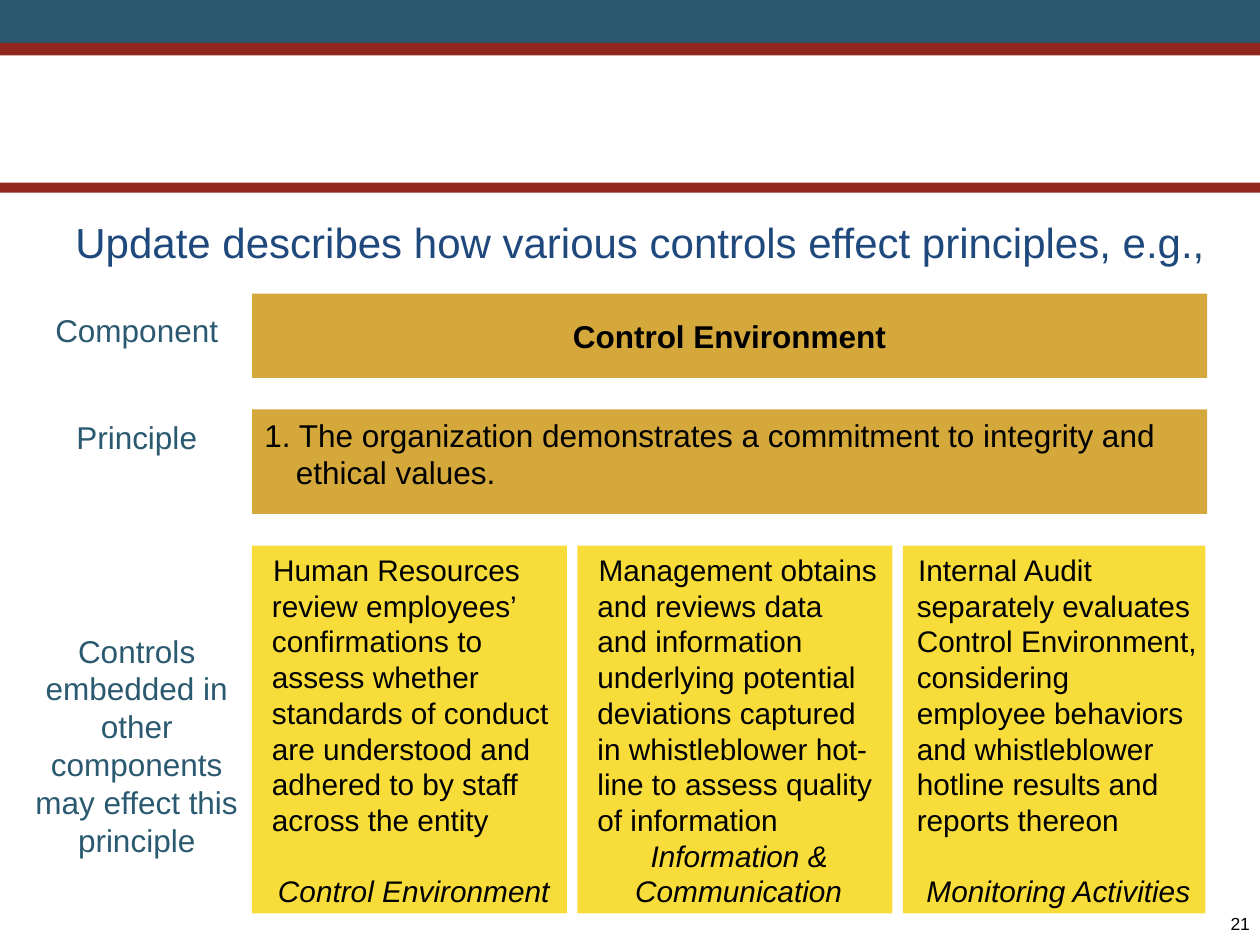
from pptx import Presentation
from pptx.dml.color import RGBColor
from pptx.enum.shapes import MSO_SHAPE
from pptx.enum.text import MSO_ANCHOR, PP_ALIGN
from pptx.util import Inches, Pt

RECTANGLE = MSO_SHAPE.RECTANGLE
TOP, MIDDLE = MSO_ANCHOR.TOP, MSO_ANCHOR.MIDDLE
LEFT, CENTER, RIGHT = PP_ALIGN.LEFT, PP_ALIGN.CENTER, PP_ALIGN.RIGHT

TEAL = RGBColor(0x2A, 0x59, 0x70)
RED = RGBColor(0x91, 0x27, 0x1F)
GOLD = RGBColor(0xD5, 0xA8, 0x3B)
YELLOW = RGBColor(0xF8, 0xDD, 0x3A)
NAVY = RGBColor(0x1F, 0x49, 0x7D)
BLACK = RGBColor(0, 0, 0)

TITLE = "Update describes how various controls effect principles, e.g.,"
COMPONENT = "Control Environment"
PRINCIPLE = ("1. The organization demonstrates a commitment to integrity "
             "and ethical values.")
PAGE_NUMBER = "21"
BANDS = [(0, 0.34, TEAL), (0.34, 0.1, RED), (1.45, 0.08, RED)]
LABELS = [
    ("Component", 0),
    ("Principle", 39.5),
    ("Controls embedded in other components may effect this principle", 100.5),
]
CONTROLS = [
    ("Human Resources review employees’ confirmations to assess whether "
     "standards of conduct are understood and adhered to by staff across "
     "the entity", "Control Environment", 20.4, 2.5, 0.1),
    ("Management obtains and reviews data and information underlying "
     "potential deviations captured in whistleblower hot-line to assess "
     "quality of information", "Information & Communication", 0, 2.5, 0.1),
    ("Internal Audit separately evaluates Control Environment, considering "
     "employee behaviors and whistleblower hotline results and reports "
     "thereon", "Monitoring Activities", 20.4, 2.4, 0.05),
]
BODY_LEFT, BODY_WIDTH = 2, 7.58
CONTROL_TOP, CONTROL_HEIGHT, CONTROL_GAP = 4.33, 2.92, 1 / 12


def add_box(slide, left, top, width, height, fill):
    shape = slide.shapes.add_shape(
        RECTANGLE, Inches(left), Inches(top), Inches(width), Inches(height))
    shape.shadow.inherit = False
    shape.fill.solid()
    shape.fill.fore_color.rgb = fill
    shape.line.fill.background()
    return shape


def add_text_box(slide, left, top, width, height):
    return slide.shapes.add_textbox(
        Inches(left), Inches(top), Inches(width), Inches(height))


def set_frame(shape, anchor=TOP, side=0.1, edge=0.05):
    frame = shape.text_frame
    frame.word_wrap = True
    frame.vertical_anchor = anchor
    frame.margin_left = frame.margin_right = Inches(side)
    frame.margin_top = frame.margin_bottom = Inches(edge)
    return frame


def write(paragraph, text, size, color=BLACK, align=LEFT, before=0,
          margin=0, indent=0, bold=False, italic=False):
    paragraph.text = text
    paragraph.alignment = align
    paragraph.space_before = Pt(before)
    properties = paragraph._p.get_or_add_pPr()
    properties.set("marL", str(Inches(margin)))
    properties.set("indent", str(Inches(indent)))
    font = paragraph.font
    font.name = "Arial"
    font.size = Pt(size)
    font.color.rgb = color
    font.bold = bold
    font.italic = italic


def main():
    presentation = Presentation()
    presentation.slide_width = Inches(10)
    presentation.slide_height = Inches(7.5)
    slide = presentation.slides.add_slide(presentation.slide_layouts[6])

    for top, height, color in BANDS:
        add_box(slide, 0, top, 10, height, color)

    page = set_frame(add_text_box(slide, 8.25, 7.25, 1.67, 0.17), side=0, edge=0)
    write(page.paragraphs[0], PAGE_NUMBER, 10, align=RIGHT)

    title = set_frame(add_text_box(slide, 0.5, 1.33, 9.25, 1.17), MIDDLE)
    write(title.paragraphs[0], TITLE, 24, NAVY)

    component = set_frame(
        add_box(slide, BODY_LEFT, 2.33, BODY_WIDTH, 0.67, GOLD), MIDDLE)
    write(component.paragraphs[0], COMPONENT, 18, align=CENTER, bold=True)

    principle = set_frame(
        add_box(slide, BODY_LEFT, 3.25, BODY_WIDTH, 0.83, GOLD))
    write(principle.paragraphs[0], PRINCIPLE, 18, margin=0.25, indent=-0.25)

    labels = set_frame(add_text_box(slide, 0.17, 2.42, 1.83, 4.67))
    for index, (text, before) in enumerate(LABELS):
        paragraph = labels.add_paragraph() if index else labels.paragraphs[0]
        write(paragraph, text, 18, TEAL, CENTER, before)

    left = BODY_LEFT
    for text, source, before, width, side in CONTROLS:
        control = set_frame(
            add_box(slide, left, CONTROL_TOP, width, CONTROL_HEIGHT, YELLOW),
            side=side)
        write(control.paragraphs[0], text, 17, margin=0.06, indent=0.01)
        write(control.add_paragraph(), source, 17, align=CENTER,
              before=before, margin=0.06, indent=0.01, italic=True)
        left += width + CONTROL_GAP

    presentation.save("out.pptx")


if __name__ == "__main__":
    main()
